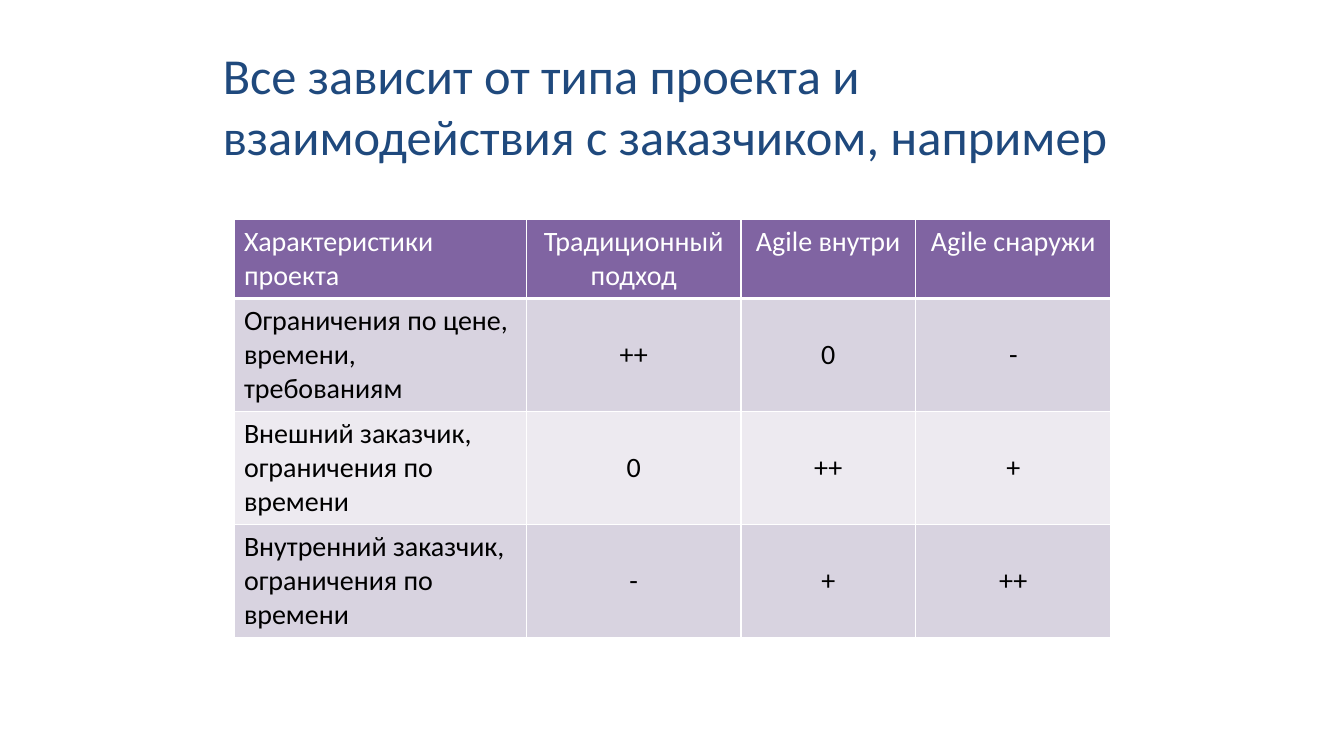
from dataclasses import dataclass

import pptx
import pptx.dml.color
import pptx.enum.text
import pptx.oxml
import pptx.oxml.ns
import pptx.util
from pptx.util import Inches


@dataclass(frozen=True)
class Theme:
    font: str = "Calibri"
    title_size: int = 36
    table_size: int = 20
    title: str = "1F497D"
    header_text: str = "FFFFFF"
    body_text: str = "000000"
    header_fill: str = "8064A2"
    band_fills: tuple = ("D8D3E0", "EDEAF0")
    border: str = "FFFFFF"


theme = Theme()
ALIGN = pptx.enum.text.PP_ALIGN
ANCHOR = pptx.enum.text.MSO_ANCHOR


def write_text(text_frame, text, *, size, color, align=ALIGN.LEFT):
    paragraph = text_frame.paragraphs[0]
    paragraph.alignment = align
    run = paragraph.add_run()
    run.text = text
    run.font.name = theme.font
    run.font.size = pptx.util.Pt(size)
    run.font.bold = False
    run.font.color.rgb = pptx.dml.color.RGBColor.from_string(color)


def fill_cell(cell, color, bottom_width):
    """Set the cell fill and its borders, 1 pt except at the bottom."""
    properties = cell._tc.get_or_add_tcPr()
    for side, width in (("L", 1), ("R", 1), ("T", 1), ("B", bottom_width)):
        properties.append(pptx.oxml.parse_xml(
            f'<a:ln{side} {pptx.oxml.ns.nsdecls("a")} w="{pptx.util.Pt(width)}">'
            f'<a:solidFill><a:srgbClr val="{theme.border}"/></a:solidFill></a:ln{side}>'))
    cell.fill.solid()
    cell.fill.fore_color.rgb = pptx.dml.color.RGBColor.from_string(color)


presentation = pptx.Presentation()
presentation.slide_width = Inches(13.33)
presentation.slide_height = Inches(7.5)
slide = presentation.slides.add_slide(presentation.slide_layouts.get_by_name("Title Only"))

title = slide.shapes.title
title.left, title.top = Inches(2.11), Inches(0.39)
title.width, title.height = Inches(9.11), Inches(0.79)
title.text_frame.word_wrap = True
title.text_frame.auto_size = pptx.enum.text.MSO_AUTO_SIZE.NONE
title.text_frame.vertical_anchor = ANCHOR.TOP
write_text(title.text_frame,
           "Все зависит от типа проекта и взаимодействия с заказчиком, например",
           size=theme.title_size, color=theme.title)

approaches = [
    ("Характеристики проекта", "Традиционный подход", "Agile внутри", "Agile снаружи"),
    ("Ограничения по цене, времени, требованиям", "++", "0", "-"),
    ("Внешний заказчик, ограничения по времени", "0", "++", "+"),
    ("Внутренний заказчик, ограничения по времени", "-", "+", "++"),
]
column_widths = (2.9, 2.13, 1.73, 1.94)
row_heights = (0.77, 1.12, 1.12, 1.12)

table = slide.shapes.add_table(
    len(approaches), len(column_widths), Inches(2.32), Inches(2.18),
    Inches(sum(column_widths)), Inches(sum(row_heights))).table
for column, width in zip(table.columns, column_widths):
    column.width = Inches(width)

for row_index, (row_texts, height) in enumerate(zip(approaches, row_heights)):
    table.rows[row_index].height = Inches(height)
    is_header = row_index == 0
    fill = theme.header_fill if is_header else theme.band_fills[(row_index - 1) % 2]
    for column_index, text in enumerate(row_texts):
        is_label = column_index == 0
        cell = table.cell(row_index, column_index)
        fill_cell(cell, fill, bottom_width=3 if is_header else 1)
        cell.vertical_anchor = ANCHOR.TOP if is_header or is_label else ANCHOR.MIDDLE
        write_text(cell.text_frame, text, size=theme.table_size,
                   color=theme.header_text if is_header else theme.body_text,
                   align=ALIGN.LEFT if is_label else ALIGN.CENTER)

presentation.save("out.pptx")
